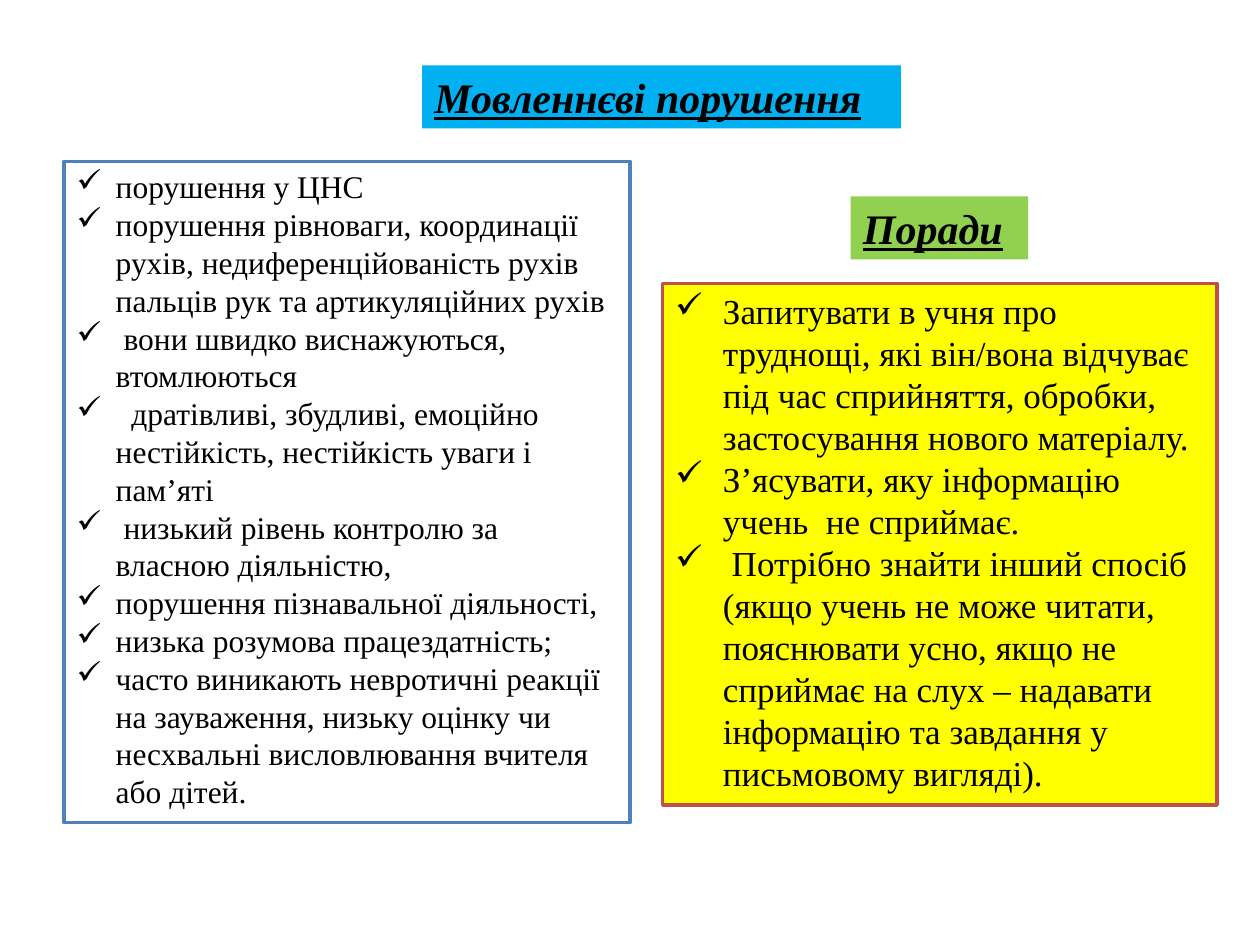
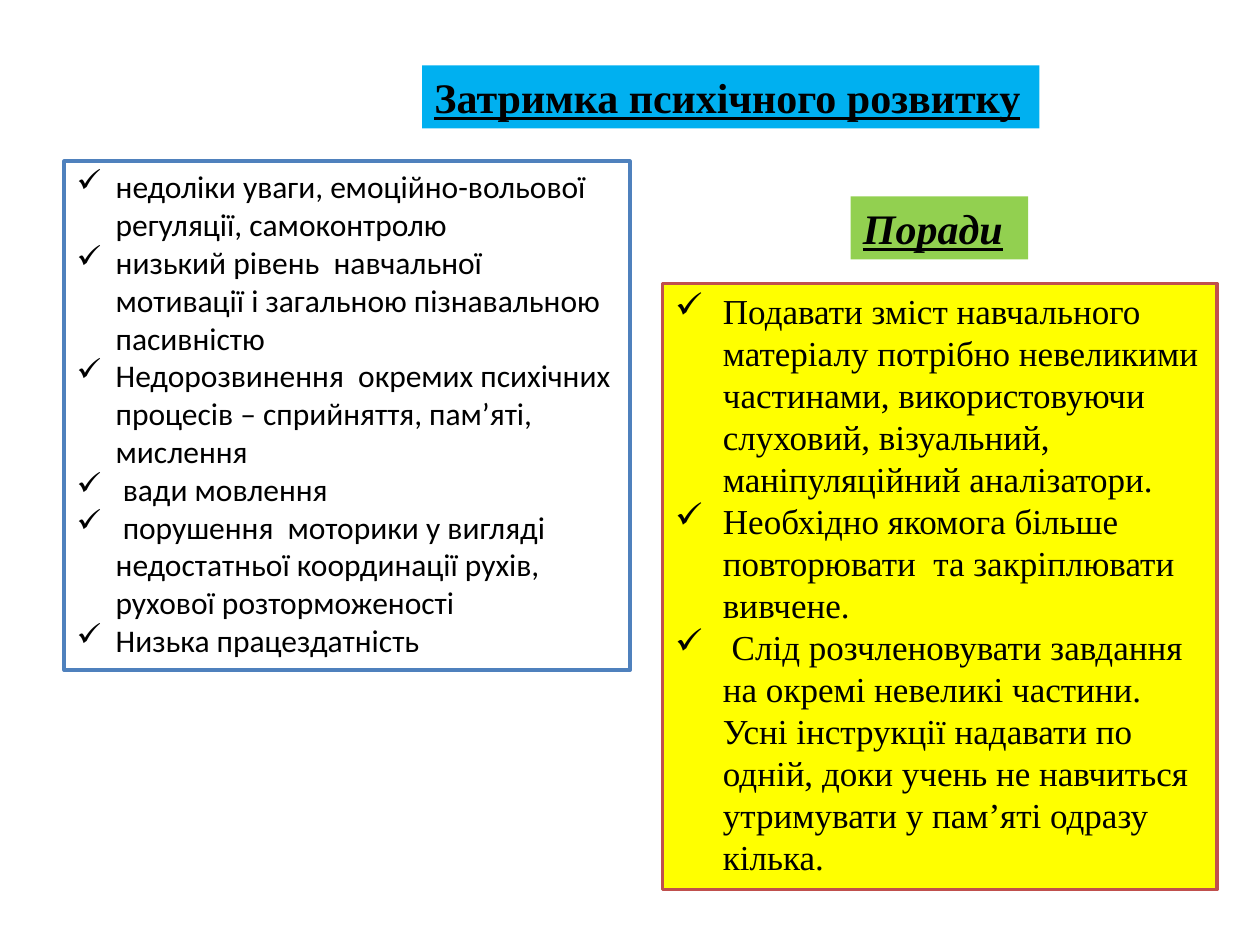
"""Build two slides on learning difficulties, each with signs and advice for teachers."""
from lxml import etree
from pptx import Presentation
from pptx.dml.color import RGBColor
from pptx.enum.shapes import MSO_SHAPE
from pptx.enum.text import MSO_ANCHOR, PP_ALIGN
from pptx.oxml.ns import qn
from pptx.util import Inches, Pt

RECTANGLE = MSO_SHAPE.RECTANGLE
TOP = MSO_ANCHOR.TOP
LEFT = PP_ALIGN.LEFT

COLORS = {
    "text": "000000",
    "title": "00B0F0",
    "advice_title": "92D050",
    "signs": "FFFFFF",
    "signs_line": "4F81BD",
    "advice": "FFFF00",
    "advice_line": "C0504D",
}
SERIF = "Times New Roman"
SANS = "Calibri"

TOPICS = [
    {
        "title": "Мовленнєві порушення",
        "title_width": 3.8,
        "title_italic": True,
        "signs_font": SERIF,
        "signs_height": 5.25,
        "signs": [
            "порушення у ЦНС",
            "порушення рівноваги, координації рухів, недиференційованість рухів "
            "пальців рук та артикуляційних рухів",
            " вони швидко виснажуються, втомлюються",
            "  дратівливі, збудливі, емоційно нестійкість, нестійкість уваги і пам’яті",
            " низький рівень контролю за власною діяльністю,",
            "порушення пізнавальної діяльності,",
            "низька розумова працездатність;",
            "часто виникають невротичні реакції \nна зауваження, низьку оцінку чи "
            "несхвальні висловлювання вчителя або дітей.",
        ],
        "advice_height": 4.14,
        "advice": [
            "Запитувати в учня про труднощі, які він/вона відчуває під час сприйняття, "
            "обробки, застосування нового матеріалу.",
            "З’ясувати, яку інформацію учень  не сприймає.",
            " Потрібно знайти інший спосіб (якщо учень не може читати, пояснювати усно, "
            "якщо не сприймає на слух – надавати інформацію та завдання у письмовому вигляді).",
        ],
    },
    {
        "title": "Затримка психічного розвитку",
        "title_width": 4.9,
        "title_italic": False,
        "signs_font": SANS,
        "signs_height": 4.04,
        "signs": [
            "недоліки уваги, емоційно-вольової регуляції, самоконтролю",
            "низький рівень  навчальної мотивації і загальною пізнавальною пасивністю",
            "Недорозвинення  окремих психічних процесів – сприйняття, пам’яті, мислення",
            " вади мовлення",
            " порушення  моторики у вигляді недостатньої координації рухів, "
            "рухової розторможеності",
            "Низька працездатність",
        ],
        "advice_height": 4.81,
        "advice": [
            "Подавати зміст навчального матеріалу потрібно невеликими частинами, "
            "використовуючи слуховий, візуальний, маніпуляційний аналізатори.",
            "Необхідно якомога більше повторювати  та закріплювати вивчене.",
            " Слід розчленовувати завдання на окремі невеликі частини. Усні інструкції "
            "надавати по одній, доки учень не навчиться утримувати у пам’яті одразу кілька.",
        ],
    },
]


def add_box(page, area, fill, lines, size, font_name=SERIF, line=None, indent=None):
    box = page.shapes.add_shape(RECTANGLE, *[Inches(length) for length in area])
    box.shadow.inherit = False
    box.fill.solid()
    box.fill.fore_color.rgb = RGBColor.from_string(COLORS[fill])
    if line:
        box.line.color.rgb = RGBColor.from_string(COLORS[line])
        box.line.width = Pt(2)
    else:
        box.line.fill.background()
    frame = box.text_frame
    frame.word_wrap = True
    frame.vertical_anchor = TOP
    for index, text in enumerate(lines):
        para = frame.paragraphs[0] if index == 0 else frame.add_paragraph()
        para.text = text
        para.alignment = LEFT
        if indent:
            properties = para._p.get_or_add_pPr()
            properties.set("marL", str(Inches(indent)))
            properties.set("indent", str(-Inches(indent)))
            etree.SubElement(properties, qn("a:buChar")).set("char", "✓")
        para.font.name = font_name
        para.font.size = Pt(size)
        para.font.color.rgb = RGBColor.from_string(COLORS["text"])
    return box


def add_heading(page, area, fill, text, italic):
    box = add_box(page, area, fill, [text], 24)
    font = box.text_frame.paragraphs[0].font
    font.bold = True
    font.italic = italic
    font.underline = True


deck = Presentation()
deck.slide_width = Inches(10)
deck.slide_height = Inches(7.5)
blank = deck.slide_layouts[6]

for topic in TOPICS:
    page = deck.slides.add_slide(blank)
    add_heading(page, (3.35, 0.52, topic["title_width"], 0.5), "title",
                topic["title"], topic["title_italic"])
    add_box(page, (0.51, 1.28, 4.49, topic["signs_height"]), "signs", topic["signs"], 18,
            font_name=topic["signs_font"], line="signs_line", indent=0.31)
    add_box(page, (5.26, 2.25, 4.4, topic["advice_height"]), "advice", topic["advice"], 20,
            line="advice_line", indent=0.38)
    add_heading(page, (6.75, 1.56, 1.41, 0.5), "advice_title", "Поради", True)

deck.save("out.pptx")
